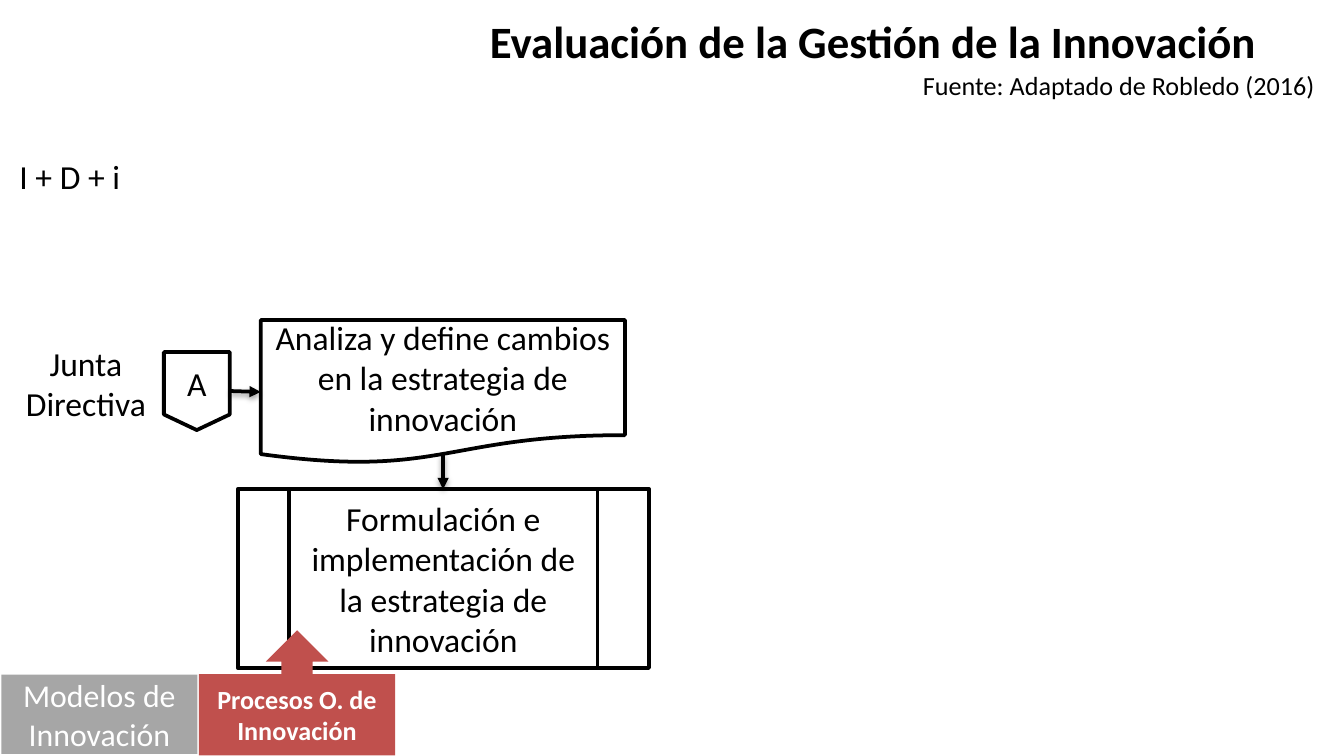
from lxml.etree import SubElement
from pptx import Presentation
from pptx.dml.color import RGBColor
from pptx.enum.shapes import MSO_CONNECTOR, MSO_SHAPE
from pptx.enum.text import MSO_ANCHOR, PP_ALIGN
from pptx.oxml.ns import qn
from pptx.util import Pt

BLACK = RGBColor(0x00, 0x00, 0x00)
WHITE = RGBColor(0xFF, 0xFF, 0xFF)
GRAY = RGBColor(0xA6, 0xA6, 0xA6)
RED = RGBColor(0xC0, 0x50, 0x4D)


class Deck:
    """Holds the style and the current slide."""

    font = {"name": "Calibri", "size": Pt(18), "bold": False}
    line = Pt(2)

    def __init__(self, width, height):
        self.prs = Presentation()
        self.prs.slide_width, self.prs.slide_height = Pt(width), Pt(height)
        self.slide = self.prs.slides.add_slide(self.prs.slide_layouts[5])

    def fill_text(self, shape, text, color=BLACK, align=PP_ALIGN.CENTER,
                  anchor=MSO_ANCHOR.TOP, wrap=True, **style):
        frame = shape.text_frame
        frame.text = text
        frame.word_wrap, frame.vertical_anchor = wrap, anchor
        para = frame.paragraphs[0]
        para.alignment = align
        for key, value in {**self.font, **style}.items():
            setattr(para.font, key, value)
        para.font.color.rgb = color

    def title(self, box, text, **style):
        shape = self.slide.shapes.title
        for key, value in zip(("left", "top", "width", "height"), box):
            setattr(shape, key, Pt(value))
        self.fill_text(shape, text, **style)

    def label(self, box, text, **style):
        shape = self.slide.shapes.add_textbox(*map(Pt, box))
        self.fill_text(shape, text, **style)

    def block(self, kind, box, text, fill=WHITE, edge=BLACK, **style):
        shape = self.slide.shapes.add_shape(kind, *map(Pt, box))
        shape.shadow.inherit = False
        shape.fill.solid()
        shape.fill.fore_color.rgb = fill
        if edge is None:
            shape.line.fill.background()
        else:
            shape.line.color.rgb = edge
            shape.line.width = self.line
        self.fill_text(shape, text, anchor=MSO_ANCHOR.MIDDLE, **style)

    def arrow(self, start, end):
        link = self.slide.shapes.add_connector(
            MSO_CONNECTOR.STRAIGHT, *map(Pt, start + end))
        link.line.color.rgb = BLACK
        link.line.width = self.line
        props = link._element.spPr
        SubElement(props.find(qn("a:ln")), qn("a:tailEnd"), type="triangle")
        # Soft shadow straight below the line
        shade = SubElement(
            SubElement(props, qn("a:effectLst")), qn("a:outerShdw"),
            blurRad=str(Pt(3.1)), dist=str(Pt(1.6)), dir="5400000",
            rotWithShape="0")
        color = SubElement(shade, qn("a:srgbClr"), val=str(BLACK))
        SubElement(color, qn("a:alpha"), val="38000")


def main():
    deck = Deck(720, 405)

    # Heading and source
    deck.title((215.3, 3.6, 504.7, 36), "Evaluación de la Gestión de la Innovación",
               size=Pt(24), bold=True)
    deck.label((487.4, 33.8, 232.6, 24.2), "Fuente: Adaptado de Robledo (2016)",
               size=Pt(14), align=PP_ALIGN.LEFT, wrap=False)

    # Row labels
    deck.label((0.7, 79.9, 73.4, 29), "I + D + i", wrap=False)
    deck.label((1.4, 180, 89.3, 51), "Junta Directiva")

    # Flow steps
    deck.block(MSO_SHAPE.FLOWCHART_DOCUMENT, (139.7, 171.4, 195.1, 77),
               "Analiza y define cambios en la estrategia de innovación")
    deck.block(MSO_SHAPE.FLOWCHART_OFFPAGE_CONNECTOR, (87.8, 188.6, 35.3, 41.8), "A")
    deck.block(MSO_SHAPE.FLOWCHART_PREDEFINED_PROCESS, (127.4, 262.1, 220.3, 95.8),
               "Formulación e implementación de la estrategia de innovación")

    # Flow arrows
    deck.arrow((123.1, 209.5), (139.7, 210))
    deck.arrow((237.4, 243.4), (237.4, 262.1))

    # Bottom tabs
    deck.block(MSO_SHAPE.RECTANGLE, (0.7, 361.4, 105.1, 42.5),
               "Modelos de Innovación", fill=GRAY, edge=None,
               color=WHITE, size=Pt(17))
    deck.block(MSO_SHAPE.UP_ARROW_CALLOUT, (106.6, 337.7, 105.1, 67),
               "Procesos O. de Innovación", fill=RED, edge=None,
               color=WHITE, size=Pt(14), bold=True)

    deck.prs.save("out.pptx")


if __name__ == "__main__":
    main()
